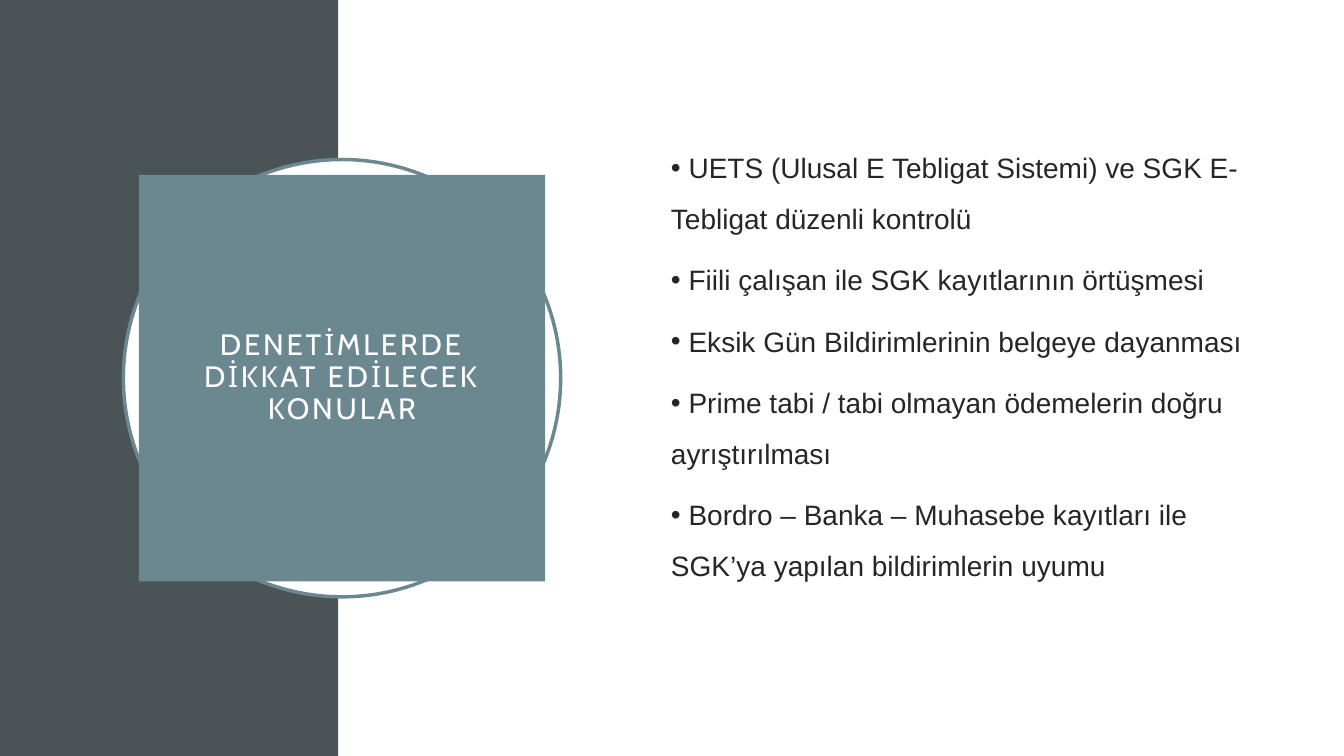
from lxml.etree import SubElement
from pptx import Presentation
from pptx.dml.color import RGBColor
from pptx.enum.shapes import MSO_SHAPE
from pptx.enum.text import MSO_ANCHOR, PP_ALIGN
from pptx.oxml.ns import qn
from pptx.util import Cm, Pt

SLIDE_WIDTH, SLIDE_HEIGHT = 33.87, 19.05
PANEL_WIDTH = 8.53
TITLE = "DENETİMLERDE DİKKAT EDİLECEK KONULAR"
CHECKPOINTS = [
    "UETS (Ulusal E Tebligat Sistemi) ve SGK E-Tebligat düzenli kontrolü",
    "Fiili çalışan ile SGK kayıtlarının örtüşmesi",
    "Eksik Gün Bildirimlerinin belgeye dayanması",
    "Prime tabi / tabi olmayan ödemelerin doğru ayrıştırılması",
    "Bordro – Banka – Muhasebe kayıtları ile SGK’ya yapılan bildirimlerin uyumu",
]


def color(hex_value):
    return RGBColor.from_string(hex_value)


def apply(target, values):
    for name, value in values.items():
        setattr(target, name, value)


class SlideBuilder:
    SLATE, TEAL, WHITE, INK = "4A5356", "6B8891", "FFFFFF", "262626"
    TITLE_FONT = {"name": "Cabin", "size": Pt(21)}
    TITLE_PARAGRAPH = {"alignment": PP_ALIGN.CENTER, "line_spacing": 0.9}
    TITLE_FRAME = {"word_wrap": True, "vertical_anchor": MSO_ANCHOR.MIDDLE,
                   "margin_left": Cm(1.2), "margin_right": Cm(1.2)}
    LIST_FONT = {"name": "Arial", "size": Pt(20)}
    LIST_PARAGRAPH = {"line_spacing": 1.5, "space_after": Pt(8)}
    LIST_FRAME = {"word_wrap": True, "vertical_anchor": MSO_ANCHOR.TOP}

    def __init__(self, slide):
        self.slide = slide

    def block(self, kind, left, top, width, height, fill, outline=None):
        shape = self.slide.shapes.add_shape(
            kind, Cm(left), Cm(top), Cm(width), Cm(height))
        shape.shadow.inherit = False
        shape.fill.solid()
        shape.fill.fore_color.rgb = color(fill)
        if outline:
            shape.line.color.rgb = color(outline)
            shape.line.width = Pt(2.5)
        else:
            shape.line.fill.background()
        return shape

    def styled_run(self, paragraph, text, paragraph_style, font_style, ink):
        apply(paragraph, paragraph_style)
        run = paragraph.add_run()
        run.text = text
        apply(run.font, font_style)
        run.font.color.rgb = color(ink)
        return run

    def title(self, square, text):
        frame = square.text_frame
        apply(frame, self.TITLE_FRAME)
        run = self.styled_run(frame.paragraphs[0], text, self.TITLE_PARAGRAPH,
                              self.TITLE_FONT, self.WHITE)
        # Letter spacing of 2 pt
        run._r.get_or_add_rPr().set("spc", "200")

    def bullet_list(self, left, top, width, height, items):
        box = self.slide.shapes.add_textbox(
            Cm(left), Cm(top), Cm(width), Cm(height))
        frame = box.text_frame
        apply(frame, self.LIST_FRAME)
        for index, item in enumerate(items):
            paragraph = frame.add_paragraph() if index else frame.paragraphs[0]
            # Wrapped lines start under the bullet, so one space follows it
            self.styled_run(paragraph, " " + item, self.LIST_PARAGRAPH,
                            self.LIST_FONT, self.INK)
            properties = paragraph._p.get_or_add_pPr()
            properties.set("marL", "0")
            properties.set("indent", "0")
            SubElement(properties, qn("a:buFont"), typeface="Arial")
            SubElement(properties, qn("a:buChar"), char="•")


def main():
    presentation = Presentation()
    apply(presentation, {"slide_width": Cm(SLIDE_WIDTH),
                         "slide_height": Cm(SLIDE_HEIGHT)})
    builder = SlideBuilder(
        presentation.slides.add_slide(presentation.slide_layouts[6]))

    # Background panels
    builder.block(MSO_SHAPE.RECTANGLE, 0, 0, PANEL_WIDTH, SLIDE_HEIGHT,
                  builder.SLATE)
    builder.block(MSO_SHAPE.RECTANGLE, PANEL_WIDTH, 0,
                  SLIDE_WIDTH - PANEL_WIDTH, SLIDE_HEIGHT, builder.WHITE)

    # Title square over its ring
    builder.block(MSO_SHAPE.OVAL, 3.11, 4.02, 11.02, 11.02,
                  builder.WHITE, builder.TEAL)
    title_square = builder.block(MSO_SHAPE.RECTANGLE, 3.5, 4.41, 10.24, 10.24,
                                 builder.TEAL)
    builder.title(title_square, TITLE)

    # Points to check
    builder.bullet_list(16.66, 3.25, 16.1, 11.75, CHECKPOINTS)

    presentation.save("out.pptx")


if __name__ == "__main__":
    main()
